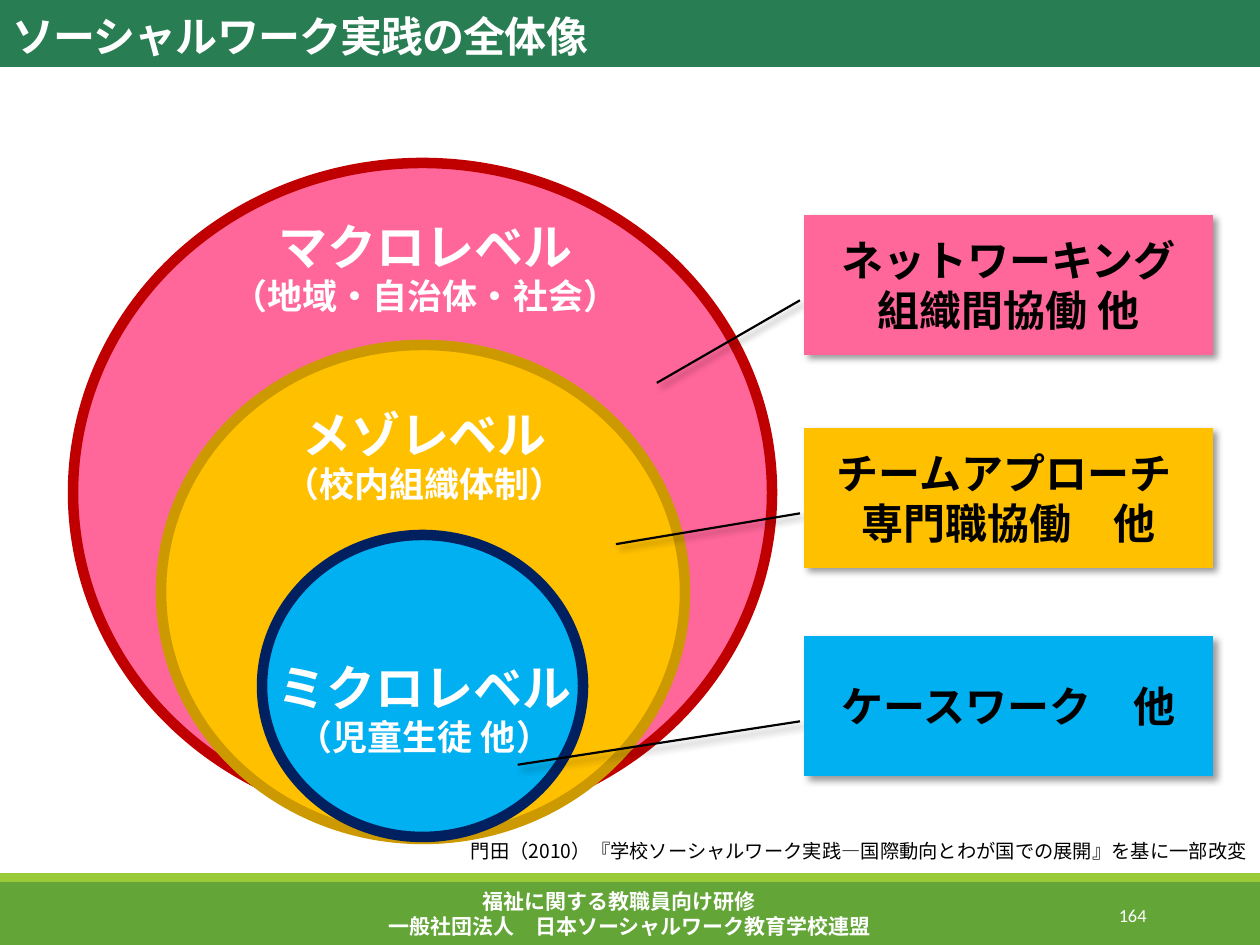
"""Build the slide showing the levels of social work practice as nested circles."""
from lxml import etree
from pptx import Presentation
from pptx.dml.color import RGBColor
from pptx.enum.shapes import MSO_SHAPE
from pptx.enum.text import MSO_ANCHOR, MSO_AUTO_SIZE, PP_ALIGN
from pptx.oxml.ns import qn
from pptx.util import Pt

PX = 914400 / 126
FACE = "Noto Sans CJK JP"
WHITE, BLACK = "FFFFFF", "000000"
PINK, AMBER, BLUE = "FF6699", "FFC000", "00B0F0"
RECT, OVAL, CALLOUT = MSO_SHAPE.RECTANGLE, MSO_SHAPE.OVAL, MSO_SHAPE.LINE_CALLOUT_1_NO_BORDER
LEFT, CENTER, RIGHT = PP_ALIGN.LEFT, PP_ALIGN.CENTER, PP_ALIGN.RIGHT
TOP, MIDDLE, BOTTOM = MSO_ANCHOR.TOP, MSO_ANCHOR.MIDDLE, MSO_ANCHOR.BOTTOM
GROW, FIXED = MSO_AUTO_SIZE.SHAPE_TO_FIT_TEXT, MSO_AUTO_SIZE.NONE

deck = Presentation()
deck.slide_width, deck.slide_height = round(1260 * PX), round(945 * PX)
page = deck.slides.add_slide(deck.slide_layouts[6])


def add_box(kind, spot, fill=None, line=None, width=0):
    """Add a text box (kind None) or a preset shape with plain paint."""
    spot = [round(value * PX) for value in spot]
    if kind is None:
        return page.shapes.add_textbox(*spot)
    box = page.shapes.add_shape(kind, *spot)
    box.shadow.inherit = False
    box.fill.solid()
    box.fill.fore_color.rgb = RGBColor.from_string(fill)
    if line:
        box.line.color.rgb = RGBColor.from_string(line)
        box.line.width = Pt(width)
    else:
        box.line.fill.background()
    return box


def write(box, lines, color, align, anchor=TOP, bold=True, wrap=True, size_mode=GROW, face=FACE):
    """Write one paragraph for each (text, size) pair."""
    frame = box.text_frame
    frame.word_wrap, frame.auto_size, frame.vertical_anchor = wrap, size_mode, anchor
    for index, (text, size) in enumerate(lines):
        para = frame.add_paragraph() if index else frame.paragraphs[0]
        para.alignment = align
        span = para.add_run()
        span.text = text
        span.font.size, span.font.bold, span.font.name = Pt(size), bold, face
        span.font.color.rgb = RGBColor.from_string(color)
        etree.SubElement(span.font._element, qn("a:ea"), typeface=face)


add_box(RECT, (0, 882, 1260, 63), "63A537")
add_box(RECT, (0, 873, 1260, 9), "99CB38")

for spot, fill, line in [
    ((73, 163, 699, 659), PINK, "C00000"),
    ((161, 345, 524, 494), AMBER, "CC9900"),
    ((262, 535, 321, 302), BLUE, "002060"),
]:
    add_box(OVAL, spot, fill, line, 6)

for spot, level, scope in [
    ((218, 210, 415, 115), "マクロレベル", "（地域・自治体・社会）"),
    ((270, 398, 309, 115), "メゾレベル", "（校内組織体制）"),
    ((263, 651, 323, 115), "ミクロレベル", "（児童生徒 他）"),
]:
    write(add_box(None, spot), [(level, 28), (scope, 20)], WHITE, CENTER, wrap=False)

for top, fill, end_y, end_x, lines in [
    (636, BLUE, 0.92, -0.7, ["ケースワーク　他"]),
    (428, AMBER, 0.83, -0.46, ["チームアプローチ ", "専門職協働　他"]),
    (215, PINK, 1.2, -0.36, ["ネットワーキング", "組織間協働 他"]),
]:
    box = add_box(CALLOUT, (804, top, 409, 140), fill, BLACK, 1.25)
    for index, value in enumerate((0.61, -0.01, end_y, end_x)):
        box.adjustments[index] = value
    effects = box._element.spPr.find(qn("a:effectLst"))
    shadow = etree.SubElement(effects, qn("a:outerShdw"), blurRad=str(Pt(4)), dist=str(Pt(3)),
                              dir="2700000", algn="tl", rotWithShape="0")
    tint = etree.SubElement(shadow, qn("a:srgbClr"), val=BLACK)
    etree.SubElement(tint, qn("a:alpha"), val="40000")
    write(box, [(text, 24) for text in lines], BLACK, CENTER, MIDDLE, size_mode=FIXED)

citation = add_box(None, (262, 833, 998, 36))
write(citation, [("門田（2010）『学校ソーシャルワーク実践―国際動向とわが国での展開』を基に一部改変", 11)],
      BLACK, RIGHT, bold=False)

footer = add_box(None, (0, 882, 1260, 63))
write(footer, [("福祉に関する教職員向け研修　", 12), ("一般社団法人　日本ソーシャルワーク教育学校連盟", 12)],
      WHITE, CENTER)

title = add_box(RECT, (0, -9, 1260, 76), "297D53")
write(title, [("ソーシャルワーク実践の全体像", 24)], WHITE, LEFT, BOTTOM)
heading = title.text_frame.paragraphs[0]
heading.line_spacing = 1.5
heading.runs[0].font._element.set("spc", "-50")

number = add_box(None, (1023, 890, 136, 50))
write(number, [("164", 10.5)], WHITE, RIGHT, MIDDLE, bold=False, size_mode=FIXED, face="Calibri")

deck.save("out.pptx")
